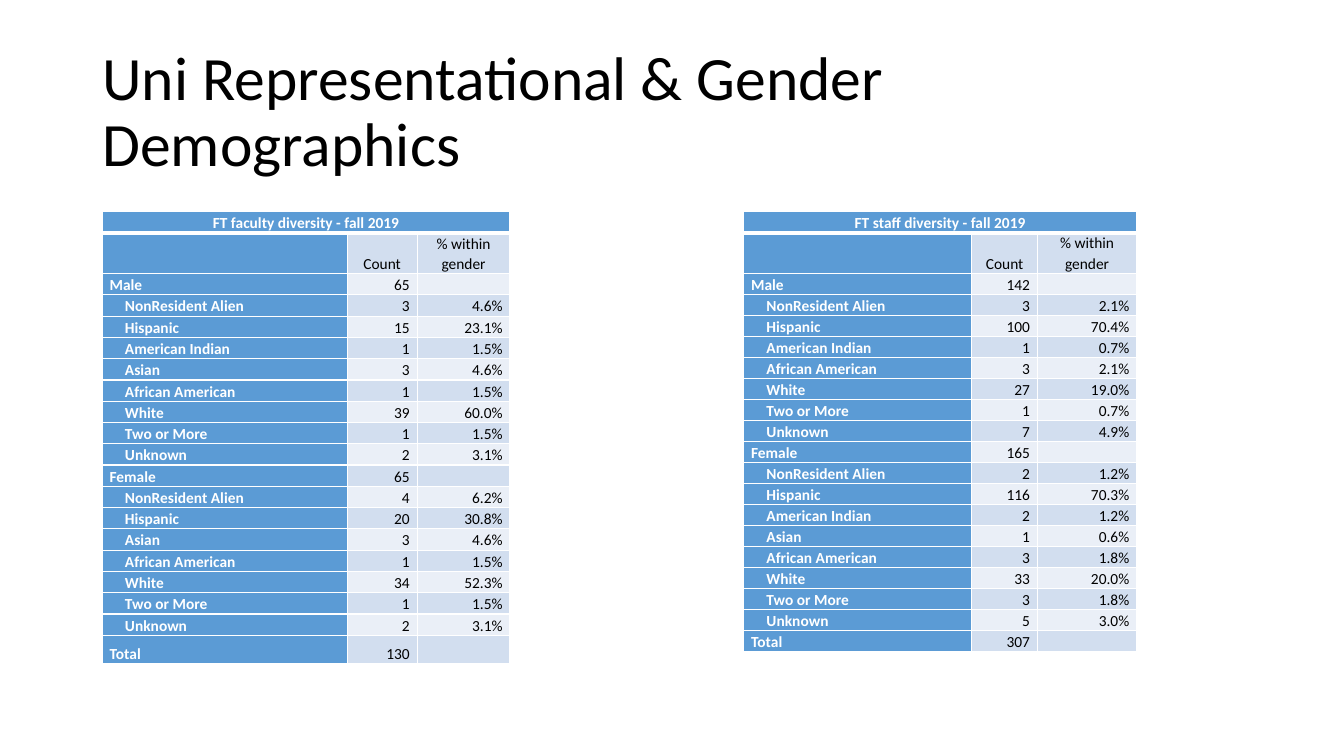
from lxml.etree import SubElement
from pptx import Presentation
from pptx.dml.color import RGBColor
from pptx.enum.text import MSO_ANCHOR, MSO_AUTO_SIZE, PP_ALIGN
from pptx.oxml.ns import qn
from pptx.util import Pt

BLUE = RGBColor(0x5B, 0x9B, 0xD5)
MID = RGBColor(0xD2, 0xDE, 0xEF)
PALE = RGBColor(0xEA, 0xEF, 0xF7)
WHITE = RGBColor(0xFF, 0xFF, 0xFF)
BLACK = RGBColor(0, 0, 0)

FACULTY = [
    ("Male", 65, ""),
    ("NonResident Alien", 3, "4.6%"),
    ("Hispanic", 15, "23.1%"),
    ("American Indian", 1, "1.5%"),
    ("Asian", 3, "4.6%"),
    ("African American", 1, "1.5%"),
    ("White", 39, "60.0%"),
    ("Two or More", 1, "1.5%"),
    ("Unknown", 2, "3.1%"),
    ("Female", 65, ""),
    ("NonResident Alien", 4, "6.2%"),
    ("Hispanic", 20, "30.8%"),
    ("Asian", 3, "4.6%"),
    ("African American", 1, "1.5%"),
    ("White", 34, "52.3%"),
    ("Two or More", 1, "1.5%"),
    ("Unknown", 2, "3.1%"),
    ("Total", 130, ""),
]
STAFF = [
    ("Male", 142, ""),
    ("NonResident Alien", 3, "2.1%"),
    ("Hispanic", 100, "70.4%"),
    ("American Indian", 1, "0.7%"),
    ("African American", 3, "2.1%"),
    ("White", 27, "19.0%"),
    ("Two or More", 1, "0.7%"),
    ("Unknown", 7, "4.9%"),
    ("Female", 165, ""),
    ("NonResident Alien", 2, "1.2%"),
    ("Hispanic", 116, "70.3%"),
    ("American Indian", 2, "1.2%"),
    ("Asian", 1, "0.6%"),
    ("African American", 3, "1.8%"),
    ("White", 33, "20.0%"),
    ("Two or More", 3, "1.8%"),
    ("Unknown", 5, "3.0%"),
    ("Total", 307, ""),
]


def write(frame, text, size=11, color=BLACK, bold=False,
          align=PP_ALIGN.LEFT, space=1.07, indent=0):
    para = frame.paragraphs[0]
    para.alignment = align
    para.line_spacing = space
    if indent:
        para._p.get_or_add_pPr().set("marL", str(Pt(indent)))
    if not text:
        SubElement(para._p, qn("a:endParaRPr"), sz=str(size * 100))
        return
    run = para.add_run()
    run.text = text
    font = run.font
    font.size = Pt(size)
    font.name = "Calibri"
    font.bold = bold
    font.color.rgb = color


def edge(cell, side, width):
    line = SubElement(cell._tc.get_or_add_tcPr(), qn("a:ln" + side),
                      w=str(Pt(width)))
    fill = SubElement(line, qn("a:solidFill"))
    SubElement(fill, qn("a:srgbClr"), val=str(WHITE))


def dress(cell, row, color):
    cell.margin_left = cell.margin_right = Pt(5.3)
    cell.margin_top = cell.margin_bottom = 0
    cell.vertical_anchor = MSO_ANCHOR.BOTTOM
    for side in "LRTB":
        thick = (row, side) in ((0, "B"), (1, "T"))
        edge(cell, side, 3 if thick else 1)
    cell.fill.solid()
    cell.fill.fore_color.rgb = color


def heading(slide, text, left, top, width, height):
    title = slide.shapes.title
    title.left, title.top = Pt(left), Pt(top)
    title.width, title.height = Pt(width), Pt(height)
    frame = title.text_frame
    frame.word_wrap = True
    frame.auto_size = MSO_AUTO_SIZE.NONE
    frame.vertical_anchor = MSO_ANCHOR.MIDDLE
    frame.margin_right = Pt(12)
    write(frame, text, size=44, space=0.9)


def census(slide, name, data, left, top, widths, step, head, last):
    rows = [(name, "", ""), ("", "Count", "% within gender"), *data]
    tall = [step, head] + [step] * (len(rows) - 3) + [last]
    table = slide.shapes.add_table(
        len(rows), len(widths), Pt(left), Pt(top),
        Pt(sum(widths)), Pt(sum(tall))).table
    table.first_row = table.horz_banding = False
    for col, width in zip(table.columns, widths):
        col.width = Pt(width)
    for row, height in zip(table.rows, tall):
        row.height = Pt(height)
    table.cell(0, 0).merge(table.cell(0, len(widths) - 1))
    for r, row in enumerate(rows):
        for c, value in enumerate(row):
            cell = table.cell(r, c)
            label = r == 0 or c == 0
            band = MID if r % 2 else PALE
            dress(cell, r, BLUE if label else band)
            if r < 2:
                align = PP_ALIGN.CENTER
            else:
                align = PP_ALIGN.RIGHT if c else PP_ALIGN.LEFT
            inner = r > 1 and c == 0 and row[2]
            write(cell.text_frame, str(value), bold=label, align=align,
                  color=WHITE if label else BLACK,
                  indent=11 if inner else 0)


def main():
    deck = Presentation()
    deck.slide_width, deck.slide_height = Pt(960), Pt(540)
    slide = deck.slides.add_slide(deck.slide_layouts[5])
    heading(slide, "Uni Representational & Gender Demographics",
            66, 28.8, 828, 104.4)
    census(slide, "FT faculty diversity - fall 2019", FACULTY,
           73, 151.2, (175, 50, 66.4), step=15.2, head=28.8, last=20.2)
    census(slide, "FT staff diversity - fall 2019", STAFF,
           531.2, 151.2, (163, 46.8, 71), step=15, head=28.2, last=15)
    deck.save("out.pptx")


if __name__ == "__main__":
    main()
